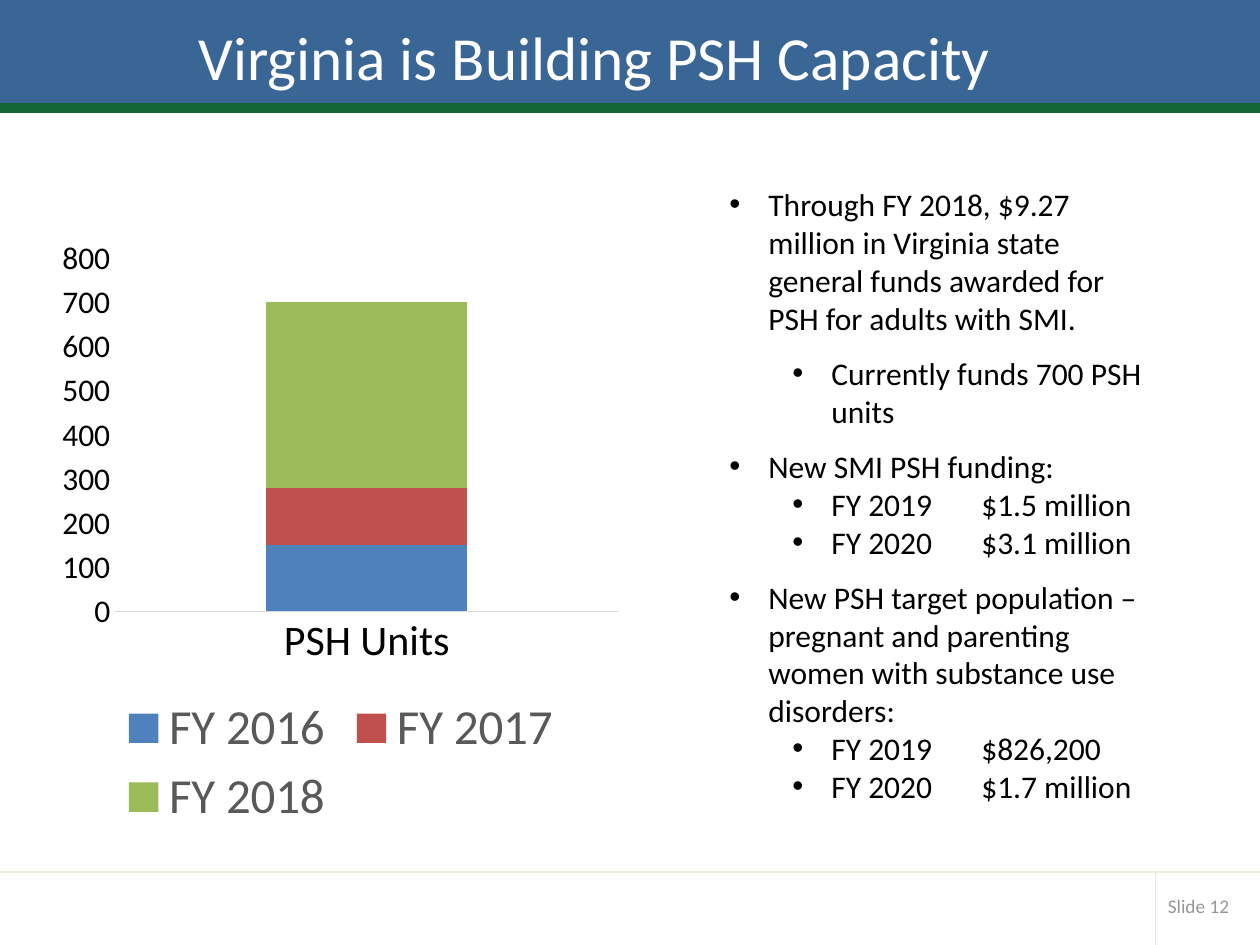
import pptx
import pptx.util
import pptx.chart.data
import pptx.dml.color
import pptx.enum.chart
import pptx.enum.shapes
import pptx.enum.text
import pptx.oxml
import pptx.oxml.ns
import lxml.etree

Inches, Pt = pptx.util.Inches, pptx.util.Pt
qn = pptx.oxml.ns.qn
WIDE, HIGH = 10, 7.5
FOOT, SPLIT = 6.92, 9.17
FACE = "Calibri"
HUES = {
    "blue": "3A6695", "green": "136735", "rule": "EEECE1", "axis": "D9D9D9",
    "white": "FFFFFF", "black": "000000", "gray": "969696", "key": "595959",
}
UNITS = [("FY 2016", 150, "4F81BD"), ("FY 2017", 130, "C0504D"),
         ("FY 2018", 420, "9BBB59")]
# Level, points of space before, wording
POINTS = [
    (0, 0, "Through FY 2018, $9.27 million in Virginia state general funds "
           "awarded for PSH for adults with SMI."),
    (1, 10, "Currently funds 700 PSH units"),
    (0, 10, "New SMI PSH funding:"),
    (1, 0, "FY 2019\t$1.5 million"),
    (1, 0, "FY 2020\t$3.1 million"),
    (0, 10, "New PSH target population – pregnant and parenting women "
            "with substance use disorders:"),
    (1, 0, "FY 2019\t$826,200"),
    (1, 0, "FY 2020\t$1.7 million"),
]


def paint(code):
    return pptx.dml.color.RGBColor.from_string(code)


def box(*sides):
    return [Inches(side) for side in sides]


def style(font, size, hue):
    font.name, font.size = FACE, Pt(size)
    font.color.rgb = paint(HUES[hue])


def add_band(slide, top, high, hue):
    band = slide.shapes.add_shape(pptx.enum.shapes.MSO_SHAPE.RECTANGLE,
                                  *box(0, top, WIDE, high))
    band.shadow.inherit = False
    band.fill.solid()
    band.fill.fore_color.rgb = band.line.color.rgb = paint(HUES[hue])
    band.line.width = Pt(2)


def add_rule(slide, *ends):
    rule = slide.shapes.add_connector(
        pptx.enum.shapes.MSO_CONNECTOR.STRAIGHT, *box(*ends))
    rule.line.color.rgb = paint(HUES["rule"])
    rule.line.width = Pt(1)
    lxml.etree.SubElement(rule._element.spPr, qn("a:effectLst"))


def add_text(slide, *sides):
    frame = slide.shapes.add_textbox(*box(*sides)).text_frame
    frame.word_wrap = True
    return frame


def set_title(slide, words):
    title = slide.shapes.title
    title.left, title.top, title.width, title.height = box(
        0.41, -0.28, 8.62, 1.45)
    title.text_frame.text = words
    title.text_frame.vertical_anchor = pptx.enum.text.MSO_ANCHOR.MIDDLE
    para = title.text_frame.paragraphs[0]
    para.alignment = pptx.enum.text.PP_ALIGN.CENTER
    style(para.font, 35, "white")
    # Bring the title in front of the bands
    slide.shapes._spTree.append(title._element)


def add_page(slide, words):
    frame = add_text(slide, SPLIT, 7.04, 0.74, 0.29)
    frame.vertical_anchor = pptx.enum.text.MSO_ANCHOR.MIDDLE
    frame.text = words
    style(frame.paragraphs[0].font, 11, "gray")


def add_list(slide, points):
    frame = add_text(slide, 5.69, 1.42, 3.51, 5.35)
    for spot, (level, gap, words) in enumerate(points):
        para = frame.add_paragraph() if spot else frame.paragraphs[0]
        para.text, para.level = words, level
        if gap:
            para.space_before = Pt(gap)
        props = para._p.get_or_add_pPr()
        props.set("marL", str(Inches(0.31 + 0.5 * level)))
        props.set("indent", str(Inches(-0.31)))
        lxml.etree.SubElement(props, qn("a:buFont"), typeface="Arial")
        lxml.etree.SubElement(props, qn("a:buChar"), char="•")
        style(para.font, 18, "black")


def place_plot(chart, **shares):
    area = chart._chartSpace.chart.plotArea
    for old in area.findall(qn("c:layout")):
        area.remove(old)
    layout = lxml.etree.Element(qn("c:layout"))
    manual = lxml.etree.SubElement(layout, qn("c:manualLayout"))
    marks = {"layoutTarget": "inner", "xMode": "edge", "yMode": "edge"}
    for tag, val in {**marks, **shares}.items():
        lxml.etree.SubElement(manual, qn("c:" + tag), val=str(val))
    area.insert(0, layout)


def set_axis(axis, size):
    axis.has_major_gridlines = False
    axis.major_tick_mark = pptx.enum.chart.XL_TICK_MARK.NONE
    style(axis.tick_labels.font, size, "black")


def add_stack(slide, units):
    data = pptx.chart.data.CategoryChartData()
    data.categories = ["PSH Units"]
    for name, count, _ in units:
        data.add_series(name, [count])
    chart = slide.shapes.add_chart(
        pptx.enum.chart.XL_CHART_TYPE.COLUMN_STACKED,
        *box(0.41, 1.81, 4.59, 4.83), data).chart
    chart.has_title = False
    style(chart.font, 10, "black")
    place_plot(chart, x=0.11, y=0.05, w=0.87, h=0.58)

    # Columns
    plot = chart.plots[0]
    plot.vary_by_categories = False
    plot.gap_width, plot.overlap = 150, 100
    for series, (_, _, code) in zip(plot.series, units):
        series.format.fill.solid()
        series.format.fill.fore_color.rgb = paint(code)

    # Axes
    set_axis(chart.category_axis, 24)
    line = chart.category_axis.format.line
    line.color.rgb, line.width = paint(HUES["axis"]), Pt(0.75)
    scale = chart.value_axis
    set_axis(scale, 18)
    scale.format.line.fill.background()
    scale.minimum_scale, scale.maximum_scale, scale.major_unit = 0, 800, 100

    # Legend
    chart.has_legend = True
    chart.legend.position = pptx.enum.chart.XL_LEGEND_POSITION.BOTTOM
    chart.legend.include_in_layout = False
    style(chart.legend.font, 28, "key")


def main():
    deck = pptx.Presentation()
    deck.slide_width, deck.slide_height = box(WIDE, HIGH)
    slide = deck.slides.add_slide(deck.slide_layouts[5])

    # Header and footer
    add_band(slide, 0, 0.83, "blue")
    add_band(slide, 0.83, 0.05, "green")
    add_rule(slide, 0, FOOT, WIDE, FOOT)
    add_rule(slide, SPLIT, FOOT, SPLIT, HIGH)
    add_page(slide, "Slide 12")
    set_title(slide, "Virginia is Building PSH Capacity")

    # Content
    add_stack(slide, UNITS)
    add_list(slide, POINTS)
    deck.save("out.pptx")


if __name__ == "__main__":
    main()
